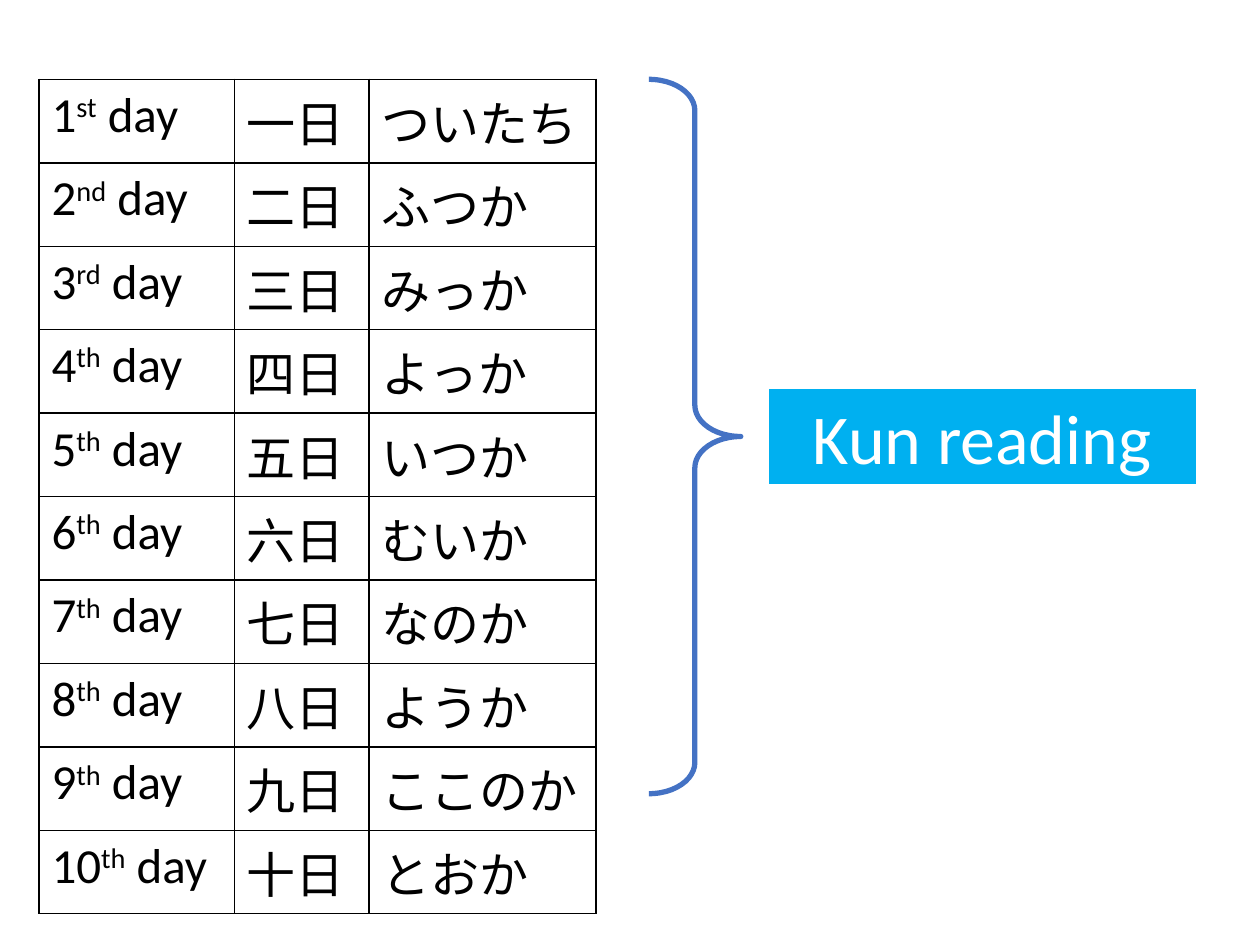
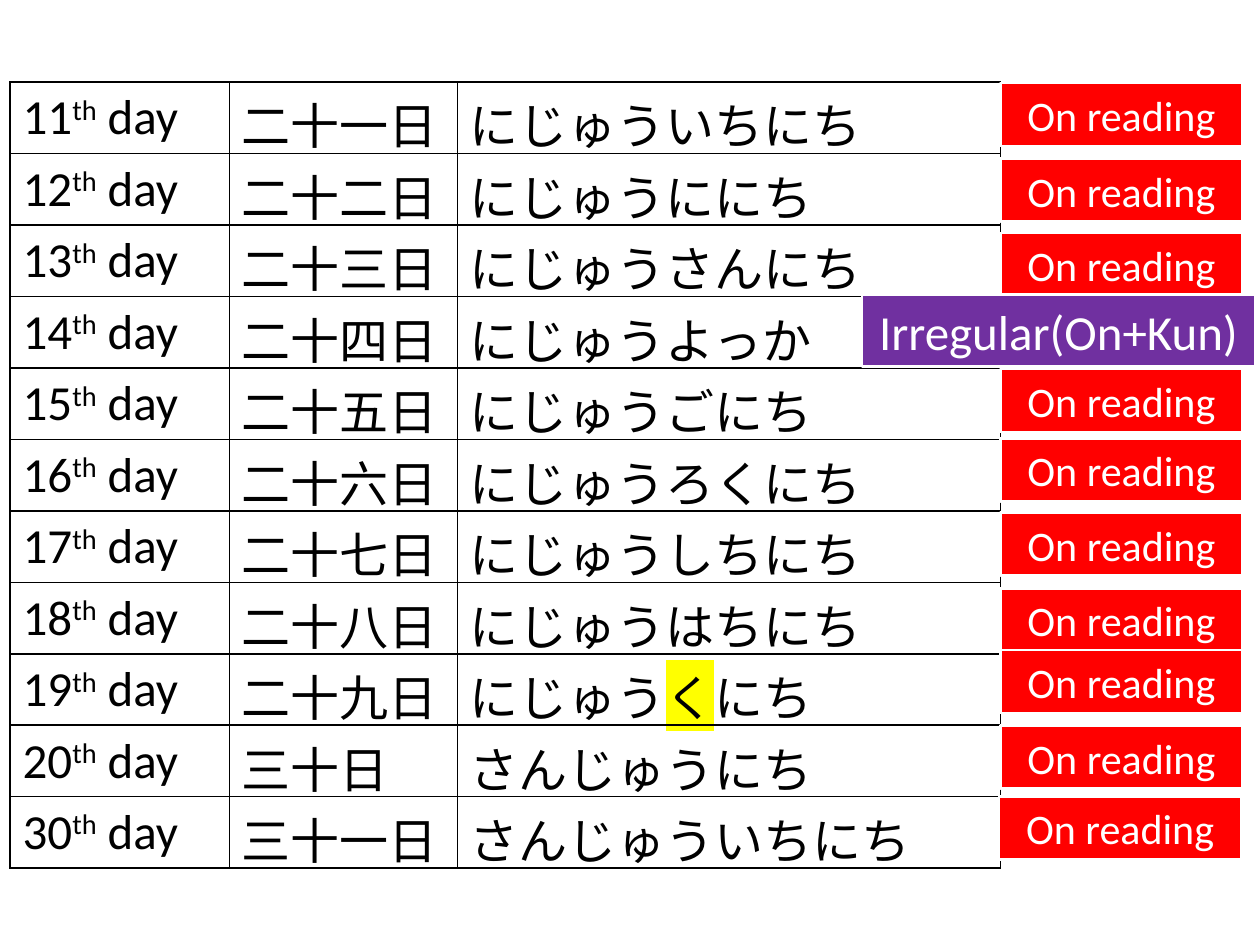
from lxml.etree import SubElement
from pptx import Presentation
from pptx.dml.color import RGBColor
from pptx.enum.shapes import MSO_SHAPE as Shape
from pptx.enum.text import MSO_ANCHOR as Anchor, MSO_AUTO_SIZE as AutoSize, PP_ALIGN as Align
from pptx.oxml import parse_xml
from pptx.oxml.ns import nsdecls, qn
from pptx.util import Inches, Pt

GRID = Inches(0.01)
COLUMNS, ROWS = 1000, 750
ROW_HEIGHT = 41
BLACK, WHITE, YELLOW = "000000", "FFFFFF", "FFFF00"
RED, SKY, PURPLE, BLUE = "FF0000", "00B0F0", "7030A0", "4472C4"

FIRST_DAYS = [
    ("1", "st", "一日", "ついたち"),
    ("2", "nd", "二日", "ふつか"),
    ("3", "rd", "三日", "みっか"),
    ("4", "th", "四日", "よっか"),
    ("5", "th", "五日", "いつか"),
    ("6", "th", "六日", "むいか"),
    ("7", "th", "七日", "なのか"),
    ("8", "th", "八日", "ようか"),
    ("9", "th", "九日", "ここのか"),
    ("10", "th", "十日", "とおか"),
]
LATER_DAYS = [
    ("11", "th", "二十一日", "にじゅういちにち"),
    ("12", "th", "二十二日", "にじゅうににち"),
    ("13", "th", "二十三日", "にじゅうさんにち"),
    ("14", "th", "二十四日", "にじゅうよっか"),
    ("15", "th", "二十五日", "にじゅうごにち"),
    ("16", "th", "二十六日", "にじゅうろくにち"),
    ("17", "th", "二十七日", "にじゅうしちにち"),
    ("18", "th", "二十八日", "にじゅうはちにち"),
    ("19", "th", "二十九日", "にじゅう|く|にち"),
    ("20", "th", "三十日", "さんじゅうにち"),
    ("30", "th", "三十一日", "さんじゅういちにち"),
]
ON_READING_TOPS = [66, 126, 185, 293, 348, 407, 467, 516, 576]


def color(value):
    return RGBColor.from_string(value)


def place(box):
    return [GRID * length for length in box]


def apply_format(target, values):
    for name, value in values.items():
        setattr(target, name, value)


def add_span(para, text, size, shade):
    span = para.add_run()
    span.text = text
    apply_format(span.font, {"name": "Calibri", "size": Pt(size)})
    span.font.color.rgb = color(shade)
    return span


def raise_span(span):
    span.font._element.set("baseline", "30000")


def highlight_span(span):
    mark = parse_xml(f'<a:highlight {nsdecls("a")}><a:srgbClr val="{YELLOW}"/></a:highlight>')
    span.font._element.find(qn("a:latin")).addprevious(mark)


def border_cell(cell):
    cell.fill.background()
    properties = cell._tc.get_or_add_tcPr()
    for position, side in enumerate(("lnL", "lnR", "lnT", "lnB")):
        edge = properties.makeelement(qn(f"a:{side}"), {"w": str(Pt(1))})
        fill = SubElement(edge, qn("a:solidFill"))
        SubElement(fill, qn("a:srgbClr"), val=BLACK)
        properties.insert(position, edge)


def add_day_table(page, box, widths, days):
    frame = page.shapes.add_table(len(days), len(widths), *place(box))
    table = frame.table
    apply_format(table, {"first_row": False, "horz_banding": False})
    for column, width in zip(table.columns, widths):
        column.width = GRID * width
    for row, (number, suffix, kanji, kana) in zip(table.rows, days):
        row.height = GRID * ROW_HEIGHT
        texts = [(number, suffix, " day"), (kanji,), kana.split("|")]
        styles = [raise_span, None, highlight_span]
        for cell, parts, style in zip(row.cells, texts, styles):
            border_cell(cell)
            para = cell.text_frame.paragraphs[0]
            spans = [add_span(para, part, 28, BLACK) for part in parts]
            if len(spans) > 1:
                style(spans[1])
    frame.height = GRID * box[3]


def add_reading_label(page, box, text, size, shade):
    label = page.shapes.add_shape(Shape.RECTANGLE, *place(box))
    label.shadow.inherit = False
    label.fill.solid()
    label.fill.fore_color.rgb = color(shade)
    label.line.color.rgb = color(WHITE)
    label.line.width = Pt(1.5)
    apply_format(label.text_frame, {
        "word_wrap": True,
        "vertical_anchor": Anchor.MIDDLE,
        "auto_size": AutoSize.SHAPE_TO_FIT_TEXT,
    })
    para = label.text_frame.paragraphs[0]
    apply_format(para, {"alignment": Align.CENTER, "space_before": Pt(size * 0.2)})
    add_span(para, text, size, WHITE)


def add_brace(page, box):
    brace = page.shapes.add_shape(Shape.RIGHT_BRACE, *place(box))
    brace.shadow.inherit = False
    brace.fill.background()
    brace.line.color.rgb = color(BLUE)
    brace.line.width = Pt(3)
    brace.adjustments[0] = 0.34
    brace.adjustments[1] = 0.5


def build_first_days(page):
    top, height = 63, 567
    add_day_table(page, (31, top, 442, height), (155, 107, 180), FIRST_DAYS)
    add_reading_label(page, (609, 308, 341, 77), "Kun reading", 40, SKY)
    add_brace(page, (515, top, 73, height))


def build_later_days(page):
    add_day_table(page, (8, 65, 785, 623), (174, 181, 431), LATER_DAYS)
    places = [(794, top) for top in ON_READING_TOPS] + [(793, 632)]
    for left, top in places:
        add_reading_label(page, (left, top, 192, 50), "On reading", 24, RED)
    add_reading_label(page, (684, 234, 312, 57), "Irregular(On+Kun)", 28, PURPLE)


def main():
    deck = Presentation()
    deck.slide_width, deck.slide_height = GRID * COLUMNS, GRID * ROWS
    for build in (build_first_days, build_later_days):
        build(deck.slides.add_slide(deck.slide_layouts[6]))
    deck.save("out.pptx")


if __name__ == "__main__":
    main()
